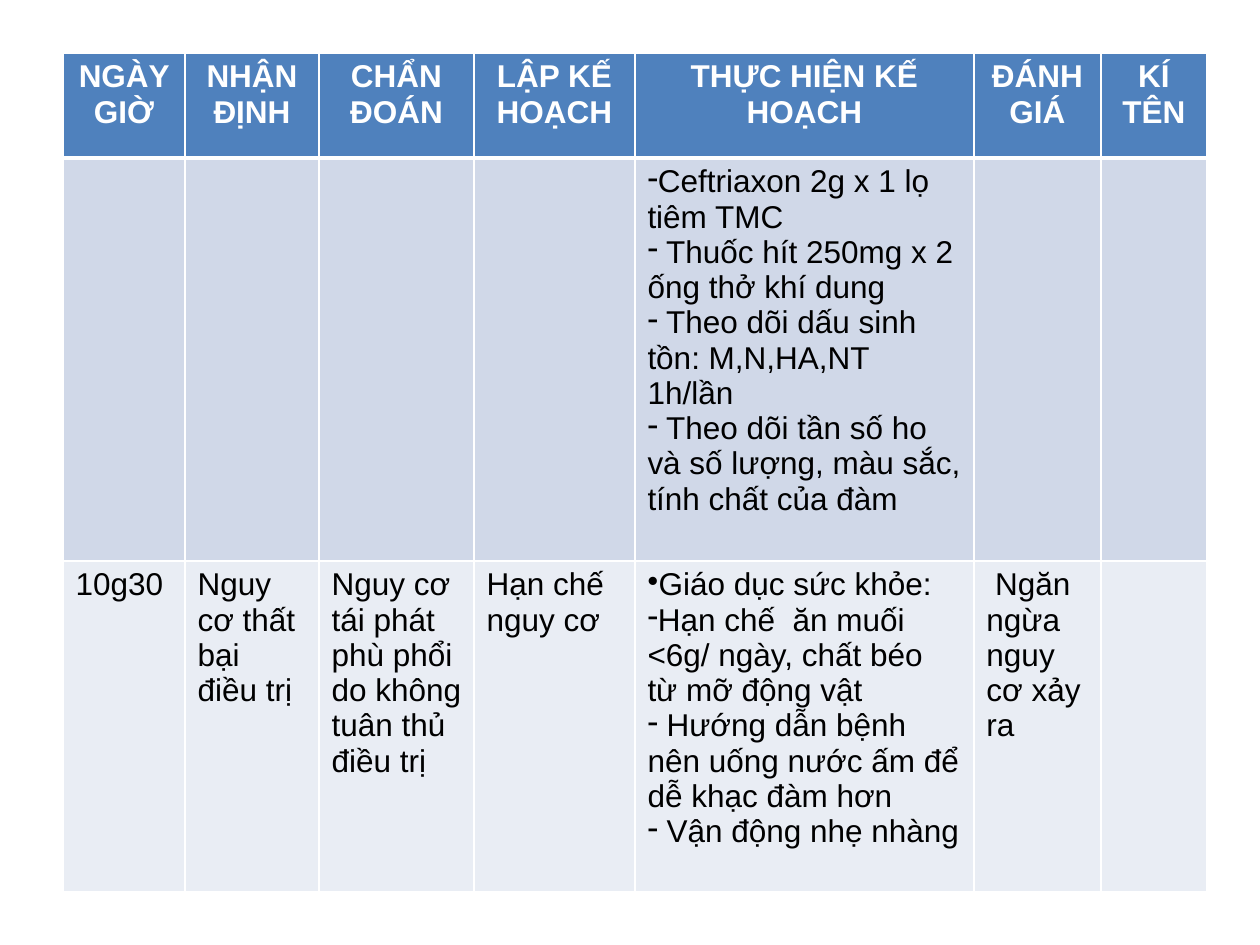
"""Build a slide with a nursing care plan table."""
import lxml.etree
import pptx
import pptx.dml.color
import pptx.enum.text
import pptx.oxml.ns
import pptx.util

PX = 914400 // 126
WHITE = pptx.dml.color.RGBColor(0xFF, 0xFF, 0xFF)
BLACK = pptx.dml.color.RGBColor(0x00, 0x00, 0x00)
HEADER_BLUE = pptx.dml.color.RGBColor(0x4F, 0x81, 0xBD)
BAND_DARK = pptx.dml.color.RGBColor(0xD0, 0xD8, 0xE8)
BAND_LIGHT = pptx.dml.color.RGBColor(0xE9, 0xED, 0xF4)

COLUMN_WIDTHS = [122, 134, 155, 161, 339, 127, 106]
ROW_HEIGHTS = [105, 403, 331]
ROW_FILLS = [HEADER_BLUE, BAND_DARK, BAND_LIGHT]
BULLETS = "-•"
ROWS = [
    ["NGÀY GIỜ", "NHẬN ĐỊNH", "CHẨN ĐOÁN", "LẬP KẾ HOẠCH",
     "THỰC HIỆN KẾ HOẠCH", "ĐÁNH GIÁ", "KÍ TÊN"],
    ["", "", "", "",
     "-Ceftriaxon 2g x 1 lọ tiêm TMC\n"
     "- Thuốc hít 250mg x 2 ống thở khí dung\n"
     "- Theo dõi dấu sinh tồn: M,N,HA,NT 1h/lần\n"
     "- Theo dõi tần số ho và số lượng, màu sắc, tính chất của đàm",
     "", ""],
    ["10g30", "Nguy cơ thất bại điều trị",
     "Nguy cơ tái phát phù phổi do không tuân thủ điều trị",
     "Hạn chế nguy cơ",
     "•Giáo dục sức khỏe:\n"
     "-Hạn chế  ăn muối <6g/ ngày, chất béo từ mỡ động vật\n"
     "- Hướng dẫn bệnh nên uống nước ấm để dễ khạc đàm hơn\n"
     "- Vận động nhẹ nhàng",
     " Ngăn ngừa nguy cơ xảy ra", ""],
]


def add_border(cell, side, points):
    properties = cell._tc.get_or_add_tcPr()
    line = lxml.etree.SubElement(properties, pptx.oxml.ns.qn(f"a:ln{side}"),
                                 w=str(pptx.util.Pt(points)))
    fill = lxml.etree.SubElement(line, pptx.oxml.ns.qn("a:solidFill"))
    lxml.etree.SubElement(fill, pptx.oxml.ns.qn("a:srgbClr"), val=str(WHITE))


def add_bullet(paragraph, character):
    properties = paragraph._p.get_or_add_pPr()
    properties.set("marL", "0")
    properties.set("indent", "0")
    lxml.etree.SubElement(properties, pptx.oxml.ns.qn("a:buChar"), char=character)


presentation = pptx.Presentation()
presentation.slide_width = pptx.util.Inches(10)
presentation.slide_height = pptx.util.Inches(7.5)
slide = presentation.slides.add_slide(presentation.slide_layouts[6])

table = slide.shapes.add_table(
    len(ROW_HEIGHTS), len(COLUMN_WIDTHS), 63 * PX, 53 * PX,
    sum(COLUMN_WIDTHS) * PX, sum(ROW_HEIGHTS) * PX).table
for column, width in zip(table.columns, COLUMN_WIDTHS):
    column.width = width * PX

for row_index, (row, height) in enumerate(zip(table.rows, ROW_HEIGHTS)):
    row.height = height * PX
    is_header = row_index == 0
    for cell, text in zip(row.cells, ROWS[row_index]):
        for side in "LRTB":
            header_rule = (row_index, side) in [(0, "B"), (1, "T")]
            add_border(cell, side, 3 if header_rule else 1)
        cell.fill.solid()
        cell.fill.fore_color.rgb = ROW_FILLS[row_index]
        for line_index, line in enumerate(text.split("\n")):
            text_frame = cell.text_frame
            paragraph = text_frame.add_paragraph() if line_index else text_frame.paragraphs[0]
            if line and line[0] in BULLETS:
                add_bullet(paragraph, line[0])
                line = line[1:]
            paragraph.text = line
            if is_header:
                paragraph.alignment = pptx.enum.text.PP_ALIGN.CENTER
            paragraph.font.name = "Arial"
            paragraph.font.size = pptx.util.Pt(18)
            paragraph.font.bold = is_header
            paragraph.font.color.rgb = WHITE if is_header else BLACK

presentation.save("out.pptx")
